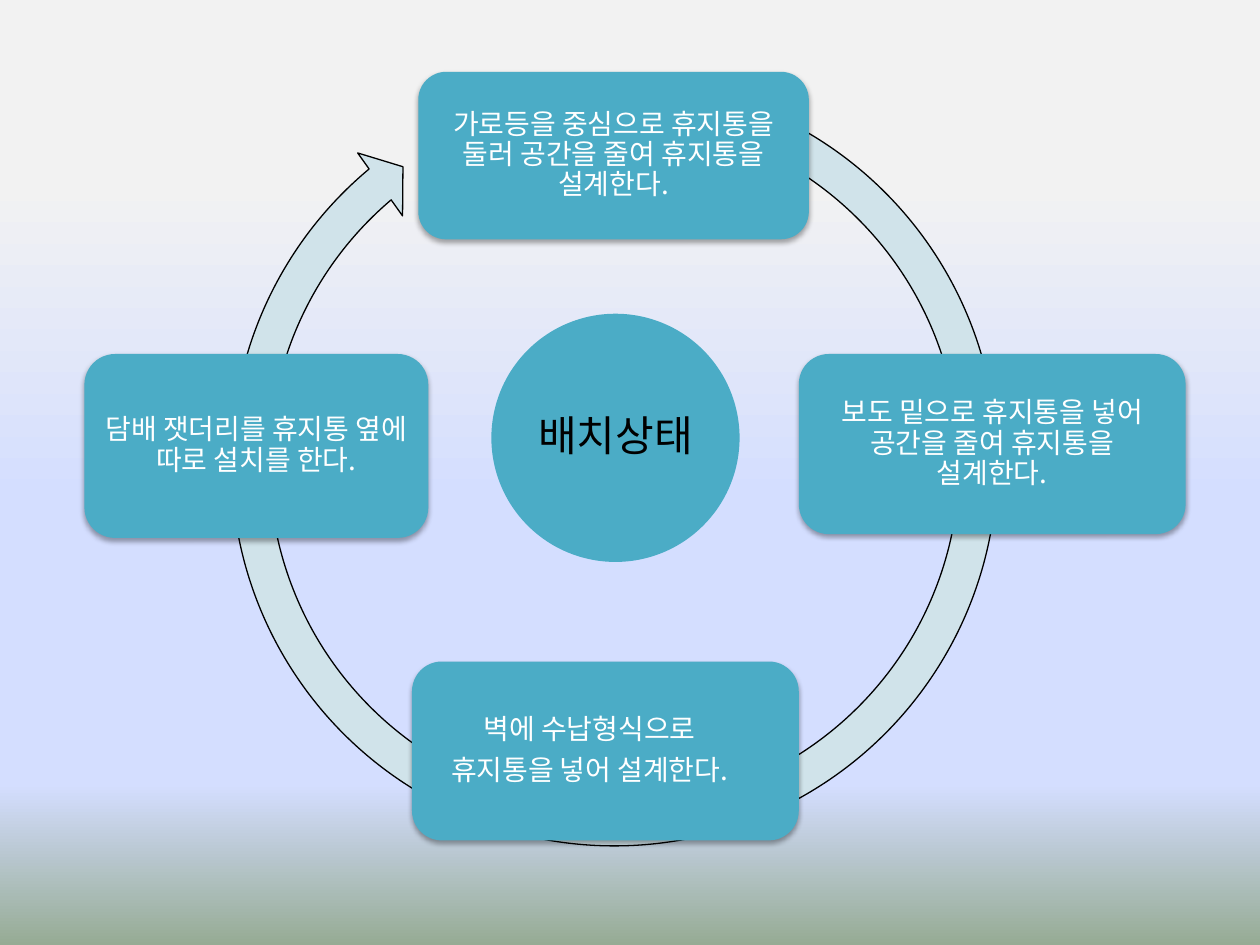
from lxml import etree
from pptx import Presentation
from pptx.dml.color import RGBColor
from pptx.enum.shapes import MSO_SHAPE
from pptx.enum.text import MSO_ANCHOR, PP_ALIGN
from pptx.oxml.ns import qn
from pptx.util import Inches, Pt

ROUNDED = MSO_SHAPE.ROUNDED_RECTANGLE
OVAL = MSO_SHAPE.OVAL
ARROW = MSO_SHAPE.CIRCULAR_ARROW
MIDDLE = MSO_ANCHOR.MIDDLE
CENTER = PP_ALIGN.CENTER

FONT = "Noto Sans CJK KR"
C = {"teal": "4BACC6", "ring": "D0E3EA", "black": "000000", "white": "FFFFFF",
     "sky": "D4DEFF", "mist": "F2F2F2", "moss": "96AB94"}


def add_filled(kind, box, color):
    sp = s.shapes.add_shape(kind, *[Inches(v) for v in box])
    sp.shadow.inherit = False
    sp.fill.solid()
    sp.fill.fore_color.rgb = RGBColor.from_string(C[color])
    sp.line.fill.background()
    return sp


def write(sp, lines, size, color, inset):
    """Fill a shape with centred lines, each a (text, right margin in inches) pair."""
    tf = sp.text_frame
    tf.word_wrap = True
    tf.vertical_anchor = MIDDLE
    tf.margin_left = tf.margin_right = tf.margin_top = tf.margin_bottom = Inches(inset)
    for i, (text, right) in enumerate(lines):
        p = tf.add_paragraph() if i else tf.paragraphs[0]
        p.alignment = CENTER
        p.line_spacing = 0.9
        p.space_after = Pt(size * 0.35)
        if right:
            p._p.get_or_add_pPr().set("marR", str(Inches(right)))
        r = p.add_run()
        r.text = text
        r.font.size = Pt(size)
        r.font.color.rgb = RGBColor.from_string(C[color])
        r.font.name = FONT
        etree.SubElement(r._r.rPr, qn("a:ea"), typeface=FONT)


prs = Presentation()
prs.slide_width, prs.slide_height = Inches(10), Inches(7.5)
s = prs.slides.add_slide(prs.slide_layouts[6])

# Background: vertical gradient
fill = s.background.fill
fill.gradient()
fill.gradient_angle = 270
stops = s.element.find(".//" + qn("a:gsLst"))
for old in list(stops):
    stops.remove(old)
for pos, color in [(19, "mist"), (53, "sky"), (83, "sky"), (100, "moss")]:
    gs = etree.SubElement(stops, qn("a:gs"), pos=str(pos * 1000))
    etree.SubElement(gs, qn("a:srgbClr"), val=C[color])

# Hub and cycle arrow
hub = add_filled(OVAL, (3.9, 2.49, 1.97, 1.97), "teal")
write(hub, [("배치상태", 0)], 24, "black", 0)

ring = add_filled(ARROW, (1.68, 0.48, 6.39, 6.39), "ring")
for i, value in enumerate([0.047, 2.729, 137.976, 174.08, 0.048]):
    ring.adjustments[i] = value
ring.line.color.rgb = RGBColor.from_string(C["black"])
ring.line.width = Pt(0.75)

# Steps, clockwise from the top
steps = [
    ((3.32, 0.57, 3.1, 1.33), [("가로등을 중심으로 휴지통을 둘러 공간을 줄여 휴지통을 설계한다.", 0)]),
    ((6.34, 2.81, 3.07, 1.43), [("보도 밑으로 휴지통을 넣어 공간을 줄여 휴지통을 설계한다.", 0)]),
    ((3.27, 5.25, 3.07, 1.42), [("벽에 수납형식으로", 0.25), ("휴지통을 넣어 설계한다.", 0)]),
    ((0.67, 2.81, 2.73, 1.46), [("담배 잿더리를 휴지통 옆에 따로 설치를 한다.", 0)]),
]
for box, lines in steps:
    step = add_filled(ROUNDED, box, "teal")
    effects = step._element.spPr.find(qn("a:effectLst"))
    shadow = etree.SubElement(effects, qn("a:outerShdw"), blurRad=str(Pt(3.1)),
                              dist=str(Pt(1.8)), dir="5400000", rotWithShape="0")
    tint = etree.SubElement(shadow, qn("a:srgbClr"), val=C["black"])
    etree.SubElement(tint, qn("a:alpha"), val="35000")
    write(step, lines, 16, "white", 0.07)

prs.save("out.pptx")
